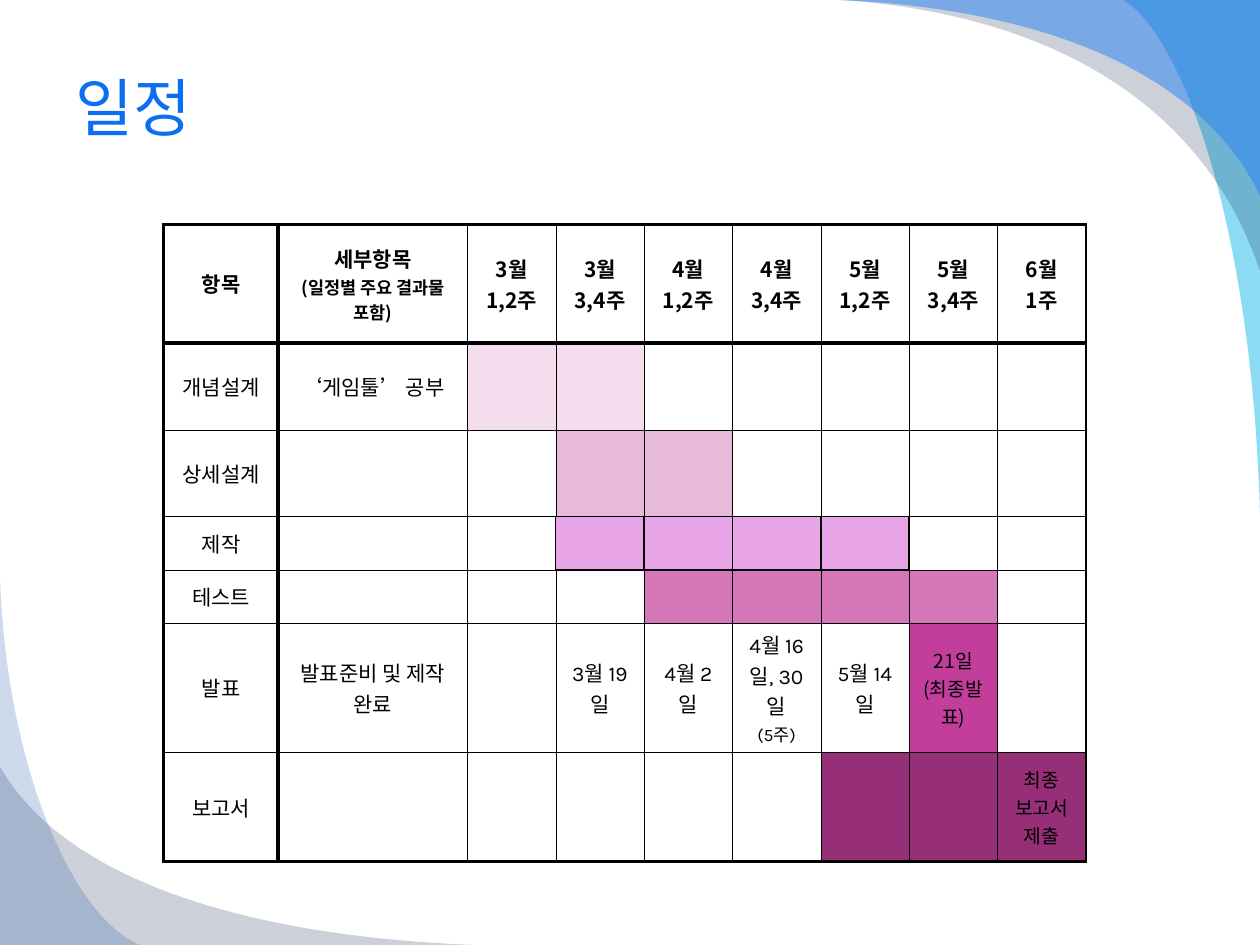
from dataclasses import dataclass

import lxml.etree
import pptx
import pptx.dml.color
import pptx.enum.text
import pptx.oxml.ns
import pptx.util

Pt = pptx.util.Pt
qn = pptx.oxml.ns.qn


@dataclass(frozen=True)
class Theme:
    title: str = "0C6FF2"
    ink: str = "000000"
    cyan: str = "00B1E9"
    navy: str = "021741"
    blue: str = "247FF4"
    deep_blue: str = "084AA1"
    bars: tuple = ("F4DDED", "E9BBDB", "E7A5E7", "D477B8", "C23E9A", "972F78")
    latin: str = "Karla"
    korean: str = "Noto Sans CJK KR"
    title_size: int = 36
    body_size: int = 12
    note_size: int = 11
    small_size: int = 10
    hairline: float = 0.28
    bar_line: float = 1
    frame_line: float = 1.7
    header_line: float = 2.54


THEME = Theme()
TOP_RIGHT, BOTTOM_LEFT = (720, 0), (0, 540)

SWOOSHES = [
    (TOP_RIGHT, [(642, 0), (678, 22), (716, 137), (720, 294)], THEME.cyan, 45),
    (TOP_RIGHT, [(480, 0), (612, 9), (691, 68), (720, 155)], THEME.navy, 20),
    (TOP_RIGHT, [(480, 0), (612, 6), (691, 50), (720, 112)], THEME.blue, 49),
    (BOTTOM_LEFT, [(270, 540), (122, 534), (32, 495), (0, 438)], THEME.navy, 20),
    (BOTTOM_LEFT, [(80, 540), (43, 525), (4, 442), (0, 330)], THEME.deep_blue, 20),
]

COLUMN_WIDTHS = [65.5, 108] + [50.5] * 7
ROW_HEIGHTS = [68, 49.5, 49.5, 30.5, 30.5, 62.5, 62.5]
PERIODS = ["3월\n1,2주", "3월\n3,4주", "4월\n1,2주", "4월\n3,4주",
           "5월\n1,2주", "5월\n3,4주", "6월\n1주"]
HEADINGS = ["항목", "세부항목\n(일정별 주요 결과물 포함)"] + PERIODS
STAGES = ["개념설계", "상세설계", "제작", "테스트", "발표", "보고서"]
DETAILS = {
    (1, 1): "‘게임툴’ 공부",
    (5, 1): "발표준비 및 제작 완료",
    (5, 3): "3월 19일",
    (5, 4): "4월 2일",
    (5, 5): "4월 16일, 30일\n(5주)",
    (5, 6): "5월 14일",
    (5, 7): "21일\n(최종발표)",
    (6, 8): "최종\n보고서 제출",
}
BAR_SPANS = [(2, 3), (3, 4), (3, 6), (4, 7), (7, 7), (6, 8)]
PRODUCTION = 3


def rgb(color):
    return pptx.dml.color.RGBColor.from_string(color)


def format_run(run, size, color, latin, bold=False):
    run.font.size = Pt(size)
    run.font.bold = bold
    run.font.name = latin
    run.font.color.rgb = rgb(color)
    east_asian = lxml.etree.Element(qn("a:ea"), typeface=THEME.korean)
    run.font._element.find(qn("a:latin")).addnext(east_asian)


def curve_points(controls, steps=40):
    for step in range(steps + 1):
        t = step / steps
        weights = ((1 - t) ** 3, 3 * t * (1 - t) ** 2, 3 * t * t * (1 - t), t ** 3)
        yield tuple(Pt(sum(w * point[axis] for w, point in zip(weights, controls)))
                    for axis in (0, 1))


def add_swoosh(slide, corner, controls, color, opacity):
    outline = slide.shapes.build_freeform(Pt(corner[0]), Pt(corner[1]))
    outline.add_line_segments(curve_points(controls), close=True)
    swoosh = outline.convert_to_shape()
    swoosh.shadow.inherit = False
    swoosh.line.fill.background()
    swoosh.fill.solid()
    swoosh.fill.fore_color.rgb = rgb(color)
    tint = swoosh._element.spPr.find(qn("a:solidFill"))[0]
    lxml.etree.SubElement(tint, qn("a:alpha"), val=str(opacity * 1000))


def place_title(slide, wording):
    title = slide.shapes.title
    title.left, title.top, title.width, title.height = Pt(36), Pt(24), Pt(648), Pt(73)
    title.text_frame.text = wording
    title.text_frame.vertical_anchor = pptx.enum.text.MSO_ANCHOR.MIDDLE
    heading = title.text_frame.paragraphs[0]
    heading.alignment = pptx.enum.text.PP_ALIGN.LEFT
    format_run(heading.runs[0], THEME.title_size, THEME.title, THEME.latin)


def vertical_line(row, edge):
    if edge in (0, len(COLUMN_WIDTHS)):
        return THEME.frame_line
    if edge == 1:
        return THEME.header_line
    first, last = BAR_SPANS[PRODUCTION - 1]
    on_bar = row == PRODUCTION and first <= edge <= last + 1
    return THEME.bar_line if on_bar else THEME.hairline


def horizontal_line(column, edge):
    if edge in (0, len(ROW_HEIGHTS)):
        return THEME.frame_line
    if edge == 1:
        return THEME.header_line
    first, last = BAR_SPANS[PRODUCTION - 1]
    on_bar = edge in (PRODUCTION, PRODUCTION + 1) and first <= column <= last
    return THEME.bar_line if on_bar else THEME.hairline


def draw_borders(cell, row, column):
    widths = {
        "a:lnL": vertical_line(row, column),
        "a:lnR": vertical_line(row, column + 1),
        "a:lnT": horizontal_line(column, row),
        "a:lnB": horizontal_line(column, row + 1),
    }
    properties = cell._tc.get_or_add_tcPr()
    for side, width in widths.items():
        border = lxml.etree.SubElement(properties, qn(side), w=str(int(Pt(width))))
        ink = lxml.etree.SubElement(border, qn("a:solidFill"))
        lxml.etree.SubElement(ink, qn("a:srgbClr"), val=THEME.ink)


def fill_cell(cell, row, column):
    first, last = BAR_SPANS[row - 1] if row else (0, -1)
    if first <= column <= last:
        cell.fill.solid()
        cell.fill.fore_color.rgb = rgb(THEME.bars[row - 1])
    else:
        cell.fill.background()


def cell_wording(row, column):
    if row == 0:
        return HEADINGS[column]
    return STAGES[row - 1] if column == 0 else DETAILS.get((row, column), "")


def line_size(row, column, line):
    if line.startswith(("(일정별", "(5주")):
        return THEME.small_size
    return THEME.note_size if (row, column) in ((5, 7), (6, 8)) else THEME.body_size


def write_cell(cell, row, column):
    cell.text_frame.text = cell_wording(row, column)
    cell.vertical_anchor = pptx.enum.text.MSO_ANCHOR.MIDDLE
    korean_face = (row == 0 and column > 0) or (row, column) in ((1, 1), (5, 7))
    face = THEME.korean if korean_face else THEME.latin
    for line in cell.text_frame.paragraphs:
        line.alignment = pptx.enum.text.PP_ALIGN.CENTER
        size = line_size(row, column, line.text)
        for run in line.runs:
            format_run(run, size, THEME.ink, face, bold=row == 0)
        lxml.etree.SubElement(line._p, qn("a:endParaRPr"), sz=str(size * 100))


def add_schedule(slide):
    frame = slide.shapes.add_table(
        len(ROW_HEIGHTS), len(COLUMN_WIDTHS), Pt(93.6), Pt(128.2),
        Pt(sum(COLUMN_WIDTHS)), Pt(sum(ROW_HEIGHTS)))
    schedule = frame.table
    schedule.first_row = schedule.horz_banding = False
    for column, width in zip(schedule.columns, COLUMN_WIDTHS):
        column.width = Pt(width)
    for row, height in enumerate(ROW_HEIGHTS):
        schedule.rows[row].height = Pt(height)
        for column in range(len(COLUMN_WIDTHS)):
            cell = schedule.cell(row, column)
            write_cell(cell, row, column)
            draw_borders(cell, row, column)
            fill_cell(cell, row, column)


def main():
    deck = pptx.Presentation()
    deck.slide_width, deck.slide_height = Pt(720), Pt(540)
    slide = deck.slides.add_slide(deck.slide_layouts.get_by_name("Title Only"))
    for swoosh in SWOOSHES:
        add_swoosh(slide, *swoosh)
    place_title(slide, "일정")
    add_schedule(slide)
    deck.save("out.pptx")


if __name__ == "__main__":
    main()
